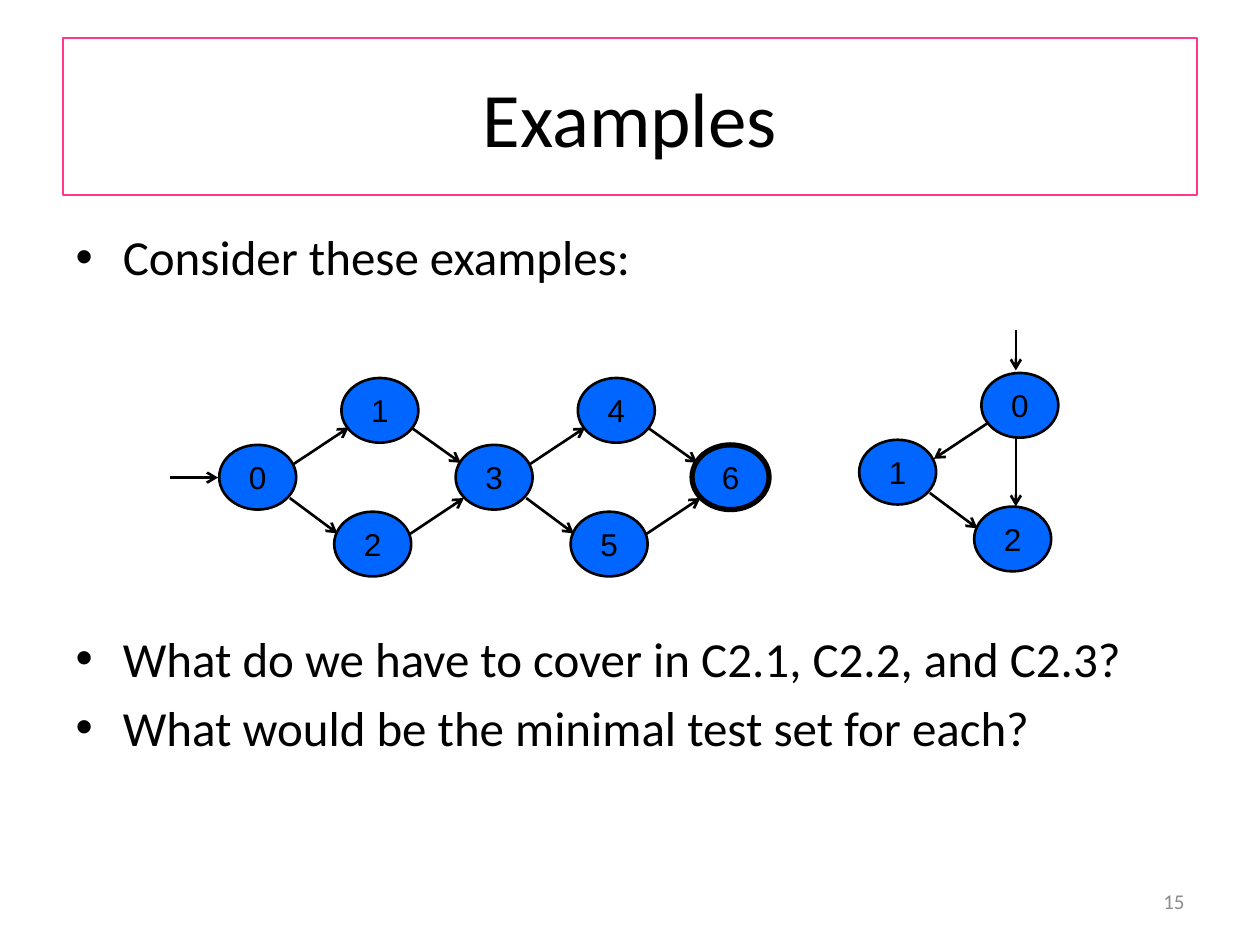
from lxml import etree
from pptx import Presentation
from pptx.dml.color import RGBColor
from pptx.enum.shapes import MSO_CONNECTOR, MSO_SHAPE
from pptx.enum.text import MSO_ANCHOR, MSO_AUTO_SIZE, PP_ALIGN
from pptx.oxml.ns import qn
from pptx.util import Pt

OVAL = MSO_SHAPE.OVAL
LINE = MSO_CONNECTOR.STRAIGHT
MID = MSO_ANCHOR.MIDDLE
FIXED = MSO_AUTO_SIZE.NONE
CENTER, RIGHT = PP_ALIGN.CENTER, PP_ALIGN.RIGHT

BLACK = RGBColor(0, 0, 0)
BLUE = RGBColor(0x00, 0x66, 0xFF)
PINK = RGBColor(0xFF, 0x38, 0x8C)
GREY = RGBColor(0x8C, 0x8C, 0x8C)

NODE = 44, 37
# Offsets from the top left corner of a diamond's left node
UP, DOWN, STEP = (69.8, -38.2), (65.7, 38.2), 135.1
RISE = (42.6, 10.9, 74, -9.9)      # left node to upper node
FALL = (40.3, 30.4, 67.5, 50.6)    # left node to lower node
SINK = (110.5, -9.3, 138, 10.3)    # upper node to right node
CLIMB = (108.4, 51.3, 139.8, 30.4)  # lower node to right node


class Deck:
    def __init__(self):
        self.prs = Presentation()
        self.prs.slide_width, self.prs.slide_height = Pt(720), Pt(540)
        self.slide = self.prs.slides.add_slide(self.prs.slide_layouts[1])
        self.forms = {
            "title": {"name": "Calibri", "size": Pt(44)},
            "body": {"name": "Calibri", "size": Pt(28)},
            "node": {"name": "Arial", "size": Pt(18)},
            "page": {"name": "Calibri", "size": Pt(12)},
        }

    def place(self, shape, *box):
        names = "left", "top", "width", "height"
        for name, val in zip(names, box):
            setattr(shape, name, Pt(val))

    def label(self, par, text, form, color=BLACK):
        run = par.add_run()
        run.text = text
        for name, val in self.forms[form].items():
            setattr(run.font, name, val)
        run.font.color.rgb = color

    def title(self, text, *box):
        shape = self.slide.shapes.title
        self.place(shape, *box)
        shape.line.color.rgb = PINK
        shape.line.width = Pt(1)
        shape.text_frame.vertical_anchor = MID
        self.label(shape.text_frame.paragraphs[0], text, "title")

    def bullets(self, items, *box):
        """Fill the body; each item is a text and its space before, if special."""
        shape = self.slide.placeholders[1]
        self.place(shape, *box)
        frame = shape.text_frame
        frame.auto_size = FIXED
        for i, (text, gap) in enumerate(items):
            par = frame.add_paragraph() if i else frame.paragraphs[0]
            if gap:
                par.space_before = Pt(gap)
            self.label(par, text, "body")

    def page(self, text, *box):
        shape = self.slide.shapes.add_textbox(*map(Pt, box))
        frame = shape.text_frame
        frame.word_wrap = True
        frame.vertical_anchor = MID
        par = frame.paragraphs[0]
        par.alignment = RIGHT
        self.label(par, text, "page", GREY)

    def node(self, text, x, y, width=1.5):
        shape = self.slide.shapes.add_shape(OVAL, *map(Pt, (x, y, *NODE)))
        shape.shadow.inherit = False
        shape.fill.solid()
        shape.fill.fore_color.rgb = BLUE
        shape.line.color.rgb = BLACK
        shape.line.width = Pt(width)
        frame = shape.text_frame
        for side in ("left", "right", "top", "bottom"):
            setattr(frame, "margin_" + side, 0)
        frame.vertical_anchor = MID
        par = frame.paragraphs[0]
        par.alignment = CENTER
        self.label(par, text, "node")

    def arrow(self, x1, y1, x2, y2):
        line = self.slide.shapes.add_connector(LINE, *map(Pt, (x1, y1, x2, y2)))
        line.line.color.rgb = BLACK
        line.line.width = Pt(1.5)
        props = line._element.spPr
        etree.SubElement(props.find(qn("a:ln")), qn("a:tailEnd"), type="arrow")
        etree.SubElement(props, qn("a:effectLst"))

    def edge(self, x, y, ends, back=False):
        """Draw an edge of the diamond at x, y, reversed if back is set."""
        x1, y1, x2, y2 = ends
        if back:
            x1, y1, x2, y2 = x2, y2, x1, y1
        self.arrow(x + x1, y + y1, x + x2, y + y2)

    def fork(self, names, x, y):
        """Draw the left, upper and lower nodes of a diamond."""
        for name, (dx, dy) in zip(names, ((0, 0), UP, DOWN)):
            self.node(name, x + dx, y + dy)


def main():
    deck = Deck()
    deck.title("Examples", 36, 21.6, 648, 90)
    deck.bullets([
        ("Consider these examples:", None),
        ("What do we have to cover in C2.1, C2.2, and C2.3?", 196),
        ("What would be the minimal test set for each?", None),
    ], 36, 126, 648, 386)
    deck.page("15", 516, 500.5, 168, 28.75)

    x, y = 125.3, 254.2
    for i, names in enumerate(("012", "345")):
        left = x + i * STEP
        deck.fork(names, left, y)
        for ends in (RISE, FALL, SINK, CLIMB):
            deck.edge(left, y, ends)
    deck.node("6", x + 2 * STEP, y, 3)
    deck.arrow(97.2, 272.9, 124.6, 272.9)

    x, y = 491, 251.3
    deck.fork("102", x, y)
    deck.edge(x, y, RISE, back=True)
    deck.edge(x, y, FALL)
    for top, end in ((188.6, 211.7), (249.8, 289.4)):
        deck.arrow(580.5, top, 580.5, end)

    deck.prs.save("out.pptx")


if __name__ == "__main__":
    main()
